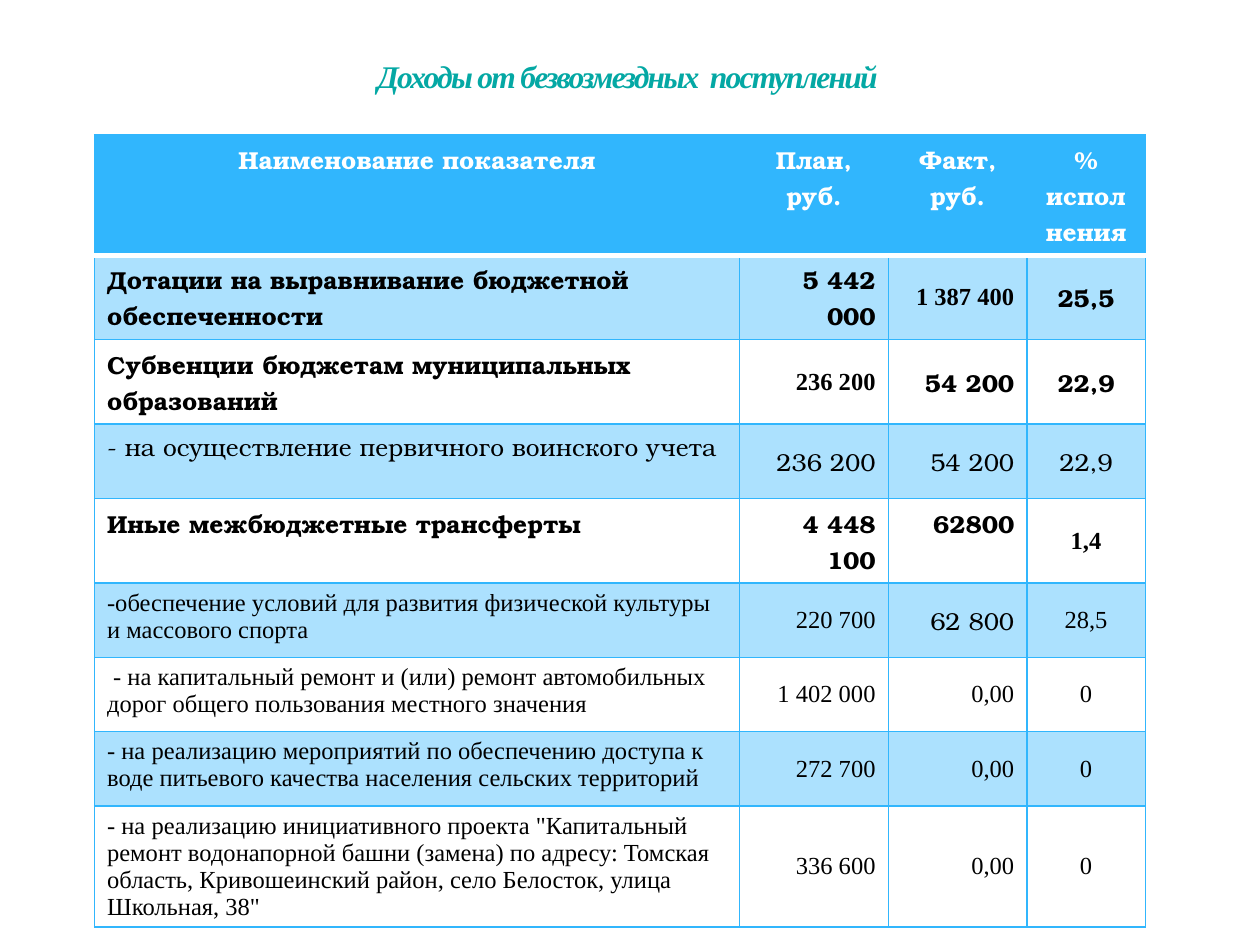
"""Build the slide on income from non-repayable receipts."""
import dataclasses

import lxml.etree
import pptx
import pptx.dml.color
import pptx.enum.text
import pptx.oxml.ns
import pptx.util

Inches = pptx.util.Inches
Align = pptx.enum.text.PP_ALIGN
Anchor = pptx.enum.text.MSO_ANCHOR


@dataclasses.dataclass(frozen=True)
class Theme:
    accent: str = "31B6FD"
    title: str = "04A8A4"
    dark: str = "000000"
    light: str = "FFFFFF"
    bonum: str = "TeX Gyre Bonum"
    times: str = "Times New Roman"
    title_size: int = 18
    table_size: int = 14
    band_alpha: int = 40
    border: float = 1
    header_rule: float = 3


THEME = Theme()
B, T = THEME.bonum, THEME.times


@dataclasses.dataclass(frozen=True)
class Income:
    texts: tuple[str, str, str, str]
    fonts: tuple[str, str, str, str]
    bold: bool = False
    top_columns: tuple[int, ...] = (0,)


HEADER = ("Наименование показателя", "План, руб.", "Факт, руб.", "% исполнения")
INCOMES = (
    Income(("Дотации на выравнивание бюджетной обеспеченности",
            "5 442 000", "1 387 400", "25,5"), (B, B, T, B), bold=True),
    Income(("Субвенции бюджетам муниципальных образований",
            "236 200", "54 200", "22,9"), (B, T, B, B), bold=True),
    Income(("- на осуществление первичного воинского учета",
            "236 200", "54 200", "22,9"), (B, B, B, B)),
    Income(("Иные межбюджетные трансферты",
            "4 448 100", "62800", "1,4"), (B, B, B, T), bold=True, top_columns=(0, 1, 2)),
    Income(("-обеспечение условий для развития физической культуры и массового спорта",
            "220 700", "62 800", "28,5"), (T, T, B, T)),
    Income((" - на капитальный ремонт и (или) ремонт автомобильных дорог общего "
            "пользования местного значения",
            "1 402 000", "0,00", "0"), (T, T, T, T)),
    Income(("- на реализацию мероприятий по обеспечению доступа к воде питьевого "
            "качества населения сельских территорий",
            "272 700", "0,00", "0"), (T, T, T, T)),
    Income(("- на реализацию инициативного проекта \"Капитальный ремонт водонапорной "
            "башни (замена) по адресу: Томская область, Кривошеинский район, село "
            "Белосток, улица Школьная, 38\"",
            "336 600", "0,00", "0"), (T, T, T, T)),
)
COLUMN_WIDTHS = (5.12, 1.18, 1.1, 0.94)
HEADER_HEIGHT, ROW_HEIGHT = 0.83, 0.59
COLUMN_ALIGNS = (Align.LEFT, Align.RIGHT, Align.RIGHT, Align.CENTER)


def rgb(color: str) -> pptx.dml.color.RGBColor:
    """Turn a hex string into a colour."""
    return pptx.dml.color.RGBColor.from_string(color)


def add_text(frame, text: str, align, font: str, size: int, color: str, bold: bool):
    """Write one aligned run into the first paragraph and return it."""
    paragraph = frame.paragraphs[0]
    paragraph.alignment = align
    run = paragraph.add_run()
    run.text = text
    run.font.name = font
    run.font.size = pptx.util.Pt(size)
    run.font.bold = bold
    run.font.color.rgb = rgb(color)
    return run


def add_border(cell, side: str, color: str, width: float) -> None:
    """Draw one side of a cell's border."""
    qn = pptx.oxml.ns.qn
    properties = cell._tc.get_or_add_tcPr()
    line = lxml.etree.SubElement(properties, qn(f"a:ln{side}"), w=str(pptx.util.Pt(width)))
    fill = lxml.etree.SubElement(line, qn("a:solidFill"))
    lxml.etree.SubElement(fill, qn("a:srgbClr"), val=color)


def add_borders(cell, row: int) -> None:
    """Frame a cell, with a thick white rule between header and body."""
    header_rule_sides = {0: "B", 1: "T"}
    for side in "LRTB":
        if header_rule_sides.get(row) == side:
            add_border(cell, side, THEME.light, THEME.header_rule)
        else:
            add_border(cell, side, THEME.accent, THEME.border)


def fill_cell(cell, row: int) -> None:
    """Fill the header solidly and every other body row with a tint."""
    if row and row % 2 == 0:
        cell.fill.background()
        return
    cell.fill.solid()
    cell.fill.fore_color.rgb = rgb(THEME.accent)
    if row:
        qn = pptx.oxml.ns.qn
        color = cell._tc.tcPr.find(qn("a:solidFill")).find(qn("a:srgbClr"))
        lxml.etree.SubElement(color, qn("a:alpha"), val=str(THEME.band_alpha * 1000))


def add_title(slide, text: str) -> None:
    """Add the centred italic title."""
    title = slide.shapes.add_textbox(Inches(1.14), Inches(0), Inches(7.68), Inches(0.75))
    frame = title.text_frame
    frame.word_wrap = True
    frame.vertical_anchor = Anchor.BOTTOM
    frame.margin_bottom = 0
    run = add_text(frame, text, Align.CENTER, THEME.times, THEME.title_size, THEME.title, True)
    run.font.italic = True
    run.font._element.set("spc", "-100")


def add_income_table(slide) -> None:
    """Add the table of planned and actual receipts."""
    heights = (HEADER_HEIGHT,) + (ROW_HEIGHT,) * len(INCOMES)
    table = slide.shapes.add_table(
        len(heights), len(COLUMN_WIDTHS), Inches(0.75), Inches(1.07),
        Inches(sum(COLUMN_WIDTHS)), Inches(sum(heights))).table
    table.horz_banding = False
    for column, width in zip(table.columns, COLUMN_WIDTHS):
        column.width = Inches(width)
    for table_row, height in zip(table.rows, heights):
        table_row.height = Inches(height)
    header = Income(HEADER, (B,) * 4, bold=True, top_columns=(0, 1, 2, 3))
    for row, income in enumerate((header,) + INCOMES):
        for column, (text, font) in enumerate(zip(income.texts, income.fonts)):
            cell = table.cell(row, column)
            add_borders(cell, row)
            fill_cell(cell, row)
            cell.vertical_anchor = Anchor.TOP if column in income.top_columns else Anchor.MIDDLE
            add_text(cell.text_frame, text, COLUMN_ALIGNS[column] if row else Align.CENTER,
                     font, THEME.table_size, THEME.dark if row else THEME.light, income.bold)


def main() -> None:
    """Create and save the presentation."""
    presentation = pptx.Presentation()
    presentation.slide_width = Inches(10)
    presentation.slide_height = Inches(7.5)
    slide = presentation.slides.add_slide(presentation.slide_layouts[6])
    add_income_table(slide)
    add_title(slide, "Доходы от безвозмездных  поступлений")
    presentation.save("out.pptx")


if __name__ == "__main__":
    main()
